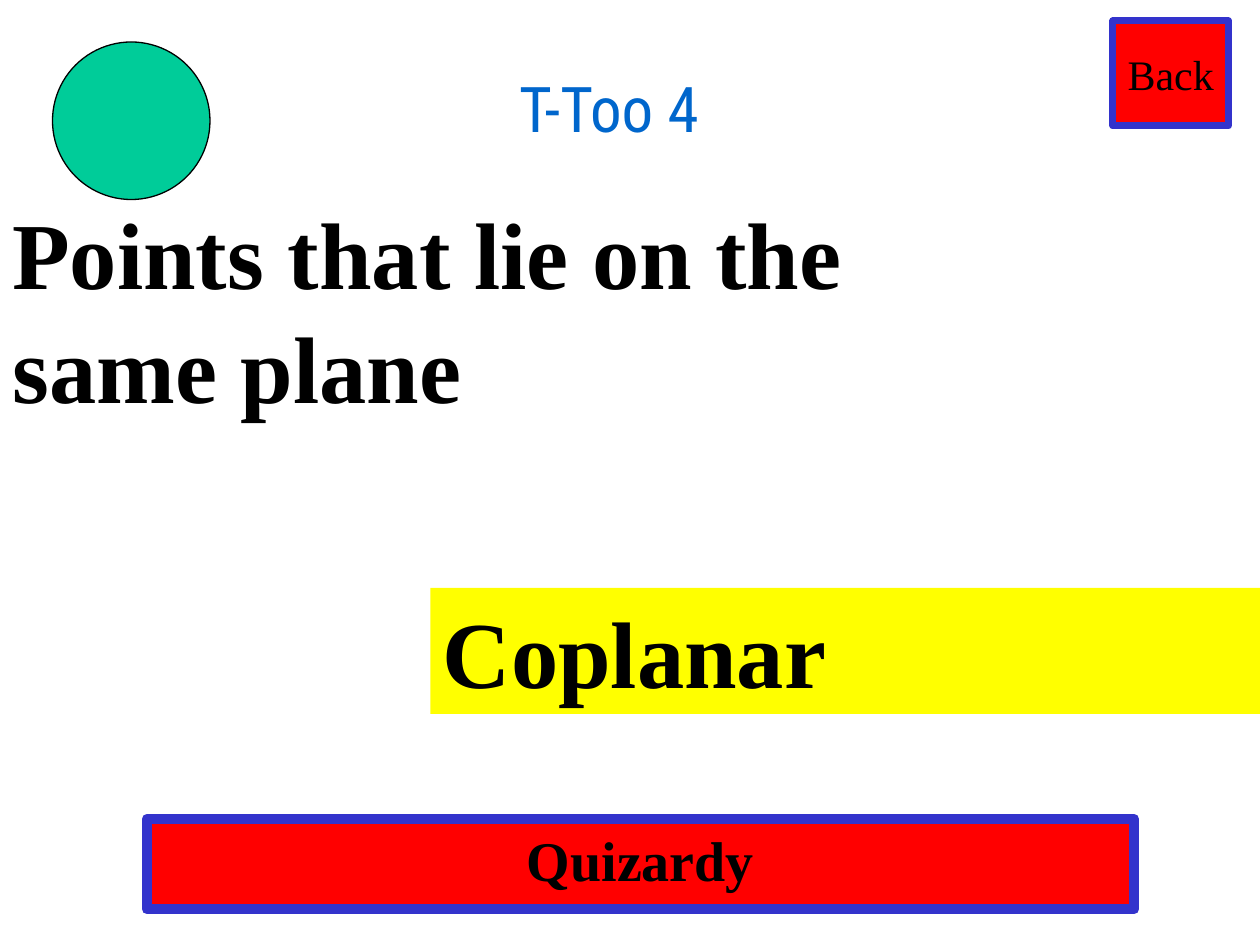
from dataclasses import dataclass
from typing import Optional
from lxml import etree
from pptx import Presentation, util as u
from pptx.dml.color import RGBColor
from pptx.enum import shapes as sh, text as tx
from pptx.oxml import ns


@dataclass(frozen=True)
class Theme:
    serif: str = "Times New Roman"
    head: str = "Roboto Condensed"
    ink: str = "000000"
    red: str = "FF0000"
    blue: str = "3333CC"
    gold: str = "FFFF00"
    green: str = "00CC99"
    title: str = "0066CC"
    glow: str = "99CCFF"
    small: int = 24
    mid: int = 32
    top: int = 36
    big: int = 54


@dataclass(frozen=True)
class Box:
    col: float
    row: float
    cols: float
    rows: float
    words: str = ""
    size: int = 0
    fill: Optional[str] = None
    line: Optional[str] = None
    width: float = 0
    bold: bool = True
    mid: bool = False
    lead: bool = True
    wrap: bool = True
    kind: sh.MSO_SHAPE = sh.MSO_SHAPE.RECTANGLE


T = Theme()
WIDE, HIGH = 10, 7.5
COLS, ROWS = 120, 90

BAR = Box(14, 78, 94, 8.6, "Quizardy", T.mid, T.red, T.blue, 6, mid=True)
HEAD = Box(28, 6, 60, 7.4, "T-Too 4", T.top)
BODY = (
    Box(106, 2, 11, 10, "Back", T.small, T.red, T.blue, 4,
        bold=False, mid=True, lead=False, wrap=False),
    Box(0, 18, 84, 22.8, "Points that lie on the same plane", T.big),
    Box(41, 56, 79, 12, "Coplanar", T.big, T.gold),
    Box(5, 4, 15, 15, fill=T.green, line=T.ink, width=0.75,
        kind=sh.MSO_SHAPE.OVAL),
)


def rgb(tone: str) -> RGBColor:
    return RGBColor.from_string(tone)


def place(box: Box) -> list[int]:
    x, y = WIDE / COLS, HIGH / ROWS
    return [u.Inches(n) for n in
            (box.col * x, box.row * y, box.cols * x, box.rows * y)]


def write(shape, box: Box, face: str, tone: str):
    frame = shape.text_frame
    frame.word_wrap = box.wrap
    frame.auto_size = tx.MSO_AUTO_SIZE.NONE
    para = frame.paragraphs[0]
    para.alignment = tx.PP_ALIGN.CENTER if box.mid else tx.PP_ALIGN.LEFT
    if box.lead:
        gap = etree.SubElement(para._p.get_or_add_pPr(), ns.qn("a:spcBef"))
        etree.SubElement(gap, ns.qn("a:spcPct"), val="50000")
    run = para.add_run()
    run.text = box.words
    font = run.font
    font.name, font.size, font.bold = face, u.Pt(box.size), box.bold
    font.color.rgb = rgb(tone)
    return run


def draw(slide, box: Box) -> None:
    if box.fill:
        shape = slide.shapes.add_shape(box.kind, *place(box))
        shape.shadow.inherit = False
        shape.fill.solid()
        shape.fill.fore_color.rgb = rgb(box.fill)
        if box.line:
            shape.line.color.rgb = rgb(box.line)
            shape.line.width = u.Pt(box.width)
        else:
            shape.line.fill.background()
    else:
        shape = slide.shapes.add_textbox(*place(box))
    if box.words:
        frame = shape.text_frame
        frame.vertical_anchor = (tx.MSO_ANCHOR.TOP if box.lead
                                 else tx.MSO_ANCHOR.MIDDLE)
        write(shape, box, T.serif, T.ink)


def title(slide, box: Box) -> None:
    shape = slide.shapes.title
    shape.left, shape.top, shape.width, shape.height = place(box)
    shape.text_frame.vertical_anchor = tx.MSO_ANCHOR.TOP
    run = write(shape, box, T.head, T.title)
    edge = etree.Element(ns.qn("a:ln"), w=str(u.Pt(1.5)))
    fill = etree.SubElement(edge, ns.qn("a:solidFill"))
    etree.SubElement(fill, ns.qn("a:srgbClr"), val=T.glow)
    run.font._element.insert(0, edge)


def main() -> None:
    deck = Presentation()
    deck.slide_width, deck.slide_height = u.Inches(WIDE), u.Inches(HIGH)
    slide = deck.slides.add_slide(deck.slide_layouts[5])
    draw(slide, BAR)
    title(slide, Box(HEAD.col, HEAD.row, HEAD.cols, HEAD.rows, HEAD.words,
                     HEAD.size, bold=False, mid=True, lead=False, wrap=False))
    for box in BODY:
        draw(slide, box)
    deck.save("out.pptx")


if __name__ == "__main__":
    main()
